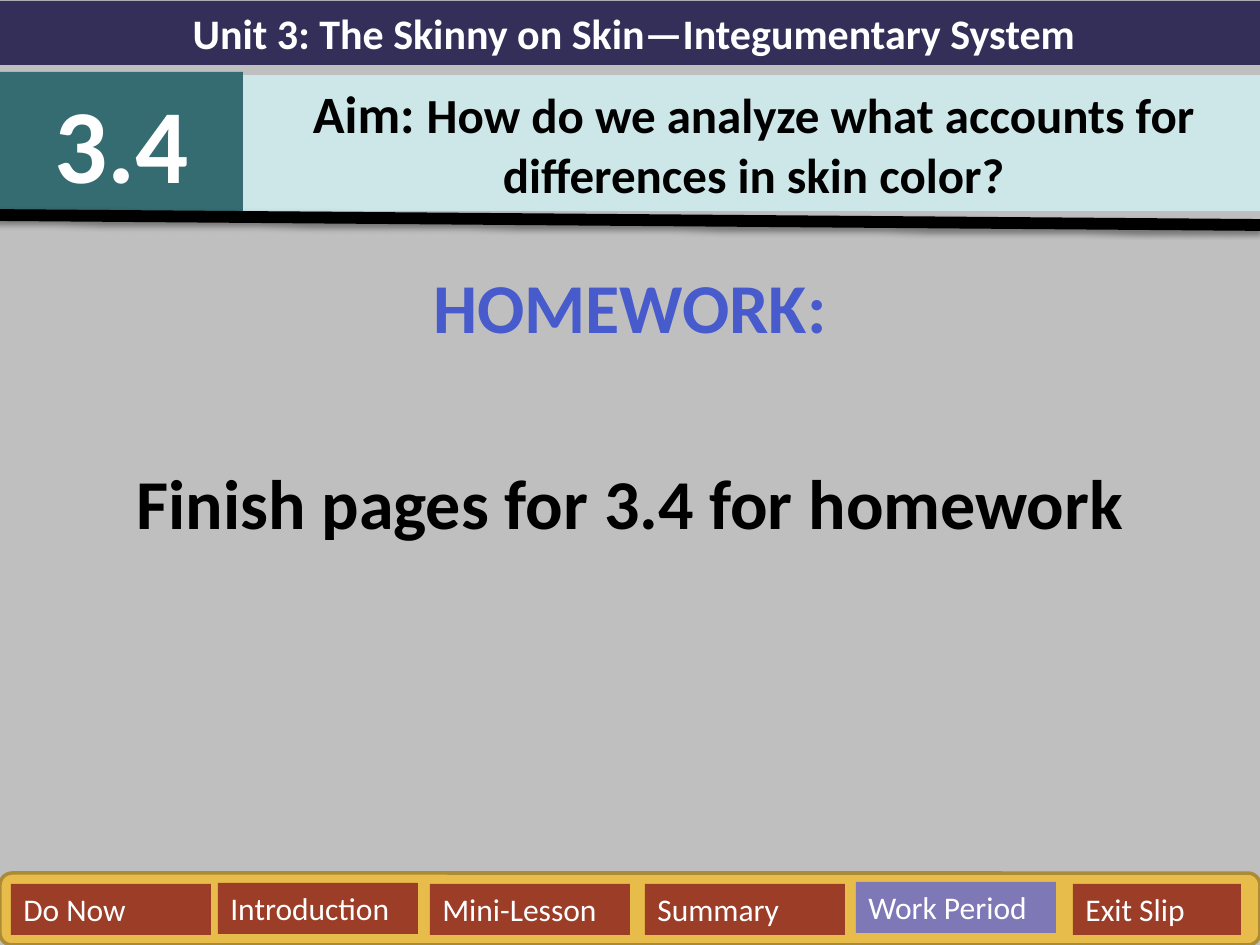
from dataclasses import dataclass

from lxml.etree import SubElement
from pptx import Presentation
from pptx.dml.color import RGBColor
from pptx.enum.shapes import MSO_CONNECTOR, MSO_SHAPE
from pptx.enum.text import MSO_ANCHOR, MSO_AUTO_SIZE, PP_ALIGN
from pptx.oxml.ns import qn
from pptx.util import Emu, Pt

PX = 914400 / 126


@dataclass(frozen=True)
class Theme:
    font: str = "Calibri"
    back: str = "BFBFBF"
    navy: str = "342F59"
    teal: str = "346C71"
    pale: str = "CDE6E8"
    gold: str = "E8BC4A"
    edge: str = "AC8B37"
    rust: str = "9C3D28"
    violet: str = "7E78B7"
    blue: str = "475BCD"
    black: str = "000000"
    white: str = "FFFFFF"
    tab: int = 18
    unit: int = 24
    aim: int = 28
    lead: int = 30
    body: int = 40
    number: int = 60


@dataclass(frozen=True)
class Box:
    left: int
    top: int
    width: int
    height: int

    def emu(self) -> list[Emu]:
        return [px(n) for n in (self.left, self.top, self.width, self.height)]


@dataclass(frozen=True)
class Tab:
    label: str
    left: int
    top: int = 884
    width: int = 200
    fill: str = Theme.rust


THEME = Theme()
TABS = [
    Tab("Do Now", 11),
    Tab("Introduction", 218, top=883),
    Tab("Mini-Lesson", 430),
    Tab("Summary", 645),
    Tab("Work Period", 856, top=882, fill=THEME.violet),
    Tab("Exit Slip", 1073, width=168),
]


def px(count: int) -> Emu:
    return Emu(round(count * PX))


def color(code: str) -> RGBColor:
    return RGBColor.from_string(code)


def paint(shape, fill: str) -> None:
    shape.fill.solid()
    shape.fill.fore_color.rgb = color(fill)


def frame(shape):
    """Set wrapping and top anchor, and return the text frame."""
    text = shape.text_frame
    text.word_wrap = True
    text.auto_size = MSO_AUTO_SIZE.NONE
    text.vertical_anchor = MSO_ANCHOR.TOP
    return text


def write(para, text: str, *, size: int, tint: str = THEME.white,
          bold: bool = True, align=PP_ALIGN.CENTER, before: int = 0) -> None:
    """Add one formatted run to a paragraph."""
    para.alignment = align
    para.space_before = Pt(before)
    run = para.add_run()
    run.text = text
    font = run.font
    font.name, font.size, font.bold = THEME.font, Pt(size), bold
    font.color.rgb = color(tint)


def panel(slide, box: Box, fill: str, kind=MSO_SHAPE.RECTANGLE):
    shape = slide.shapes.add_shape(kind, *box.emu())
    shape.shadow.inherit = False
    paint(shape, fill)
    shape.line.fill.background()
    return shape


def aim(slide) -> None:
    title = slide.shapes.title
    title.left, title.top, title.width, title.height = Box(243, 75, 1021, 136).emu()
    paint(title, THEME.pale)
    para = frame(title).paragraphs[0]
    write(para, "Aim: ", size=THEME.lead, tint=THEME.black)
    write(para, "How do we analyze what accounts for differences in skin color?",
          size=THEME.aim, tint=THEME.black)


def homework(slide) -> None:
    text = frame(slide.shapes.add_textbox(*Box(0, 257, 1260, 688).emu()))
    write(text.paragraphs[0], "HOMEWORK:", size=THEME.body, tint=THEME.blue)
    write(text.add_paragraph(), "Finish pages for 3.4 for homework",
          size=THEME.body, tint=THEME.black, before=64)


def rule(slide) -> None:
    """Draw the slanted black line with its soft shadow."""
    line = slide.shapes.add_connector(
        MSO_CONNECTOR.STRAIGHT, px(-6), px(215), px(1260), px(225))
    line.line.color.rgb = color(THEME.black)
    line.line.width = Pt(6.75)
    effects = SubElement(line._element.spPr, qn("a:effectLst"))
    shadow = SubElement(effects, qn("a:outerShdw"), blurRad=str(Pt(3.1)),
                        dist=str(Pt(1.6)), dir="5400000", rotWithShape="0")
    tint = SubElement(shadow, qn("a:srgbClr"), val=THEME.black)
    SubElement(tint, qn("a:alpha"), val="38000")


def menu(slide) -> None:
    bar = panel(slide, Box(0, 873, 1260, 72), THEME.gold, MSO_SHAPE.ROUNDED_RECTANGLE)
    bar.line.color.rgb = color(THEME.edge)
    bar.line.width = Pt(2)
    for tab in TABS:
        shape = panel(slide, Box(tab.left, tab.top, tab.width, 51), tab.fill)
        write(frame(shape).paragraphs[0], tab.label, size=THEME.tab,
              bold=False, align=PP_ALIGN.LEFT)


def main() -> None:
    deck = Presentation()
    deck.slide_width, deck.slide_height = px(1260), px(945)
    slide = deck.slides.add_slide(deck.slide_layouts[5])
    paint(slide.background, THEME.back)
    aim(slide)
    homework(slide)
    unit = panel(slide, Box(0, 1, 1268, 64), THEME.navy)
    write(frame(unit).paragraphs[0],
          "Unit 3: The Skinny on Skin—Integumentary System", size=THEME.unit)
    number = panel(slide, Box(0, 72, 243, 140), THEME.teal)
    write(frame(number).paragraphs[0], "3.4", size=THEME.number)
    rule(slide)
    menu(slide)
    deck.save("out.pptx")


if __name__ == "__main__":
    main()
